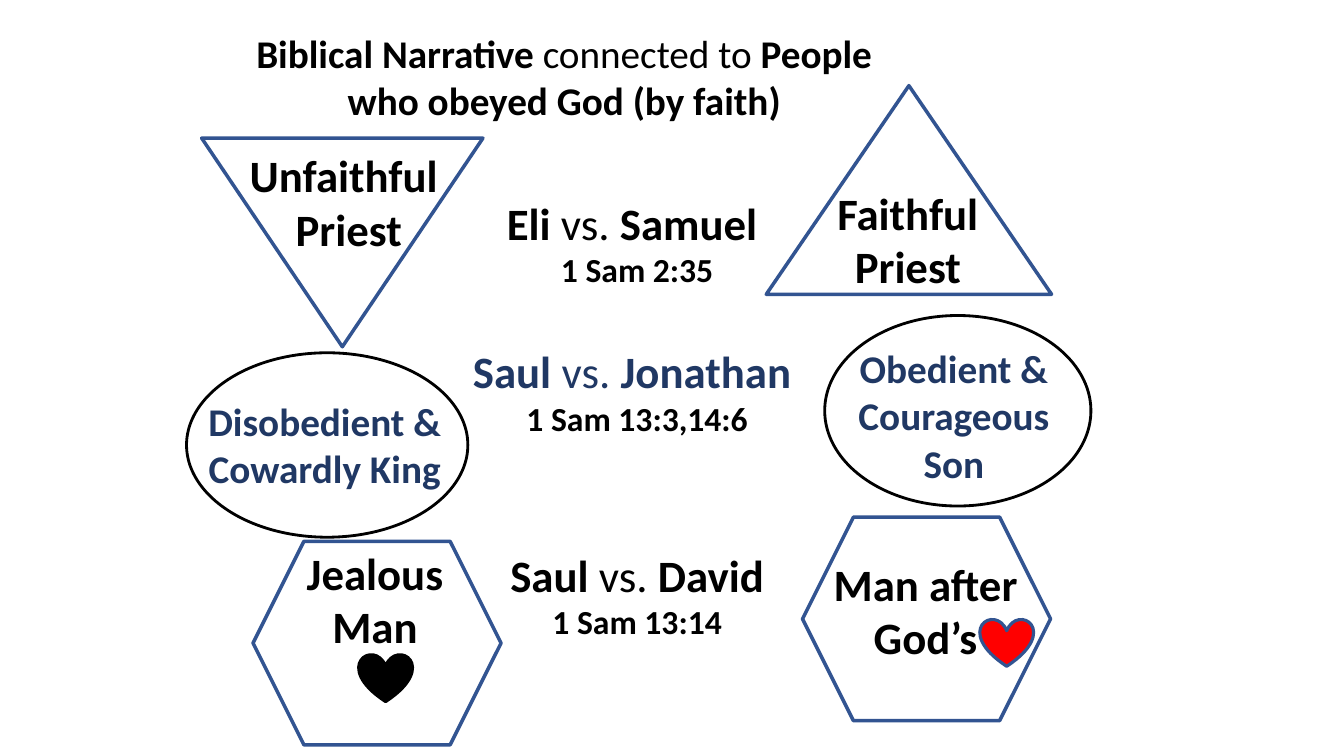
"""Build a slide contrasting biblical people who disobeyed and obeyed God."""
from pptx import Presentation
from pptx.dml.color import RGBColor
from pptx.enum.shapes import MSO_SHAPE as SHAPE
from pptx.enum.text import MSO_ANCHOR, PP_ALIGN
from pptx.util import Inches, Pt

BLACK, NAVY, BLUE, RED = "000000", "203864", "325491", "FF0000"


def color(fmt, value):
    fmt.rgb = RGBColor.from_string(value)


def write(tf, paragraphs):
    tf.word_wrap = True
    tf.vertical_anchor = MSO_ANCHOR.TOP
    for i, (size, ink, before, runs) in enumerate(paragraphs):
        p = tf.paragraphs[0] if i == 0 else tf.add_paragraph()
        p.alignment = PP_ALIGN.CENTER
        p.line_spacing = 1.0
        p.space_before = Pt(before)
        for text, bold in runs:
            r = p.add_run()
            r.text = text
            r.font.name = "Calibri"
            r.font.size = Pt(size)
            r.font.bold = bold
            color(r.font.color, ink)


prs = Presentation()
prs.slide_width, prs.slide_height = Inches(13.33), Inches(7.5)
s = prs.slides.add_slide(prs.slide_layouts[5])

title = s.shapes.title
title.left, title.top = Inches(2.14), Inches(0.24)
title.width, title.height = Inches(6.91), Inches(1.04)
write(title.text_frame, [(28, BLACK, 0, [
    ("Biblical Narrative ", True),
    ("connected to ", False),
    ("People who obeyed God (by faith)", True),
])])

pairs = [
    ("Eli ", "Samuel ", "1 Sam 2:35", BLACK, 0),
    ("Saul ", "Jonathan ", "1 Sam 13:3,14:6", NAVY, 39),
    ("Saul ", "David", "1 Sam 13:14", BLACK, 78),
]
contrasts = []
for first, second, verse, ink, before in pairs:
    contrasts.append((32, ink, before, [(first, True), ("vs. ", False), (second, True)]))
    contrasts.append((24, BLACK, 0, [(verse, True)]))
tb = s.shapes.add_textbox(Inches(4.27), Inches(1.89), Inches(4.1), Inches(5.22))
write(tb.text_frame, contrasts)

outlines = [
    (SHAPE.OVAL, 8.18, 3.13, 2.64, 1.89, 0, None, BLACK, 2),
    (SHAPE.OVAL, 1.85, 3.5, 2.79, 1.83, 0, None, BLACK, 2),
    (SHAPE.ISOSCELES_TRIANGLE, 7.6, 0.85, 2.83, 2.07, 0, None, BLUE, 2.5),
    (SHAPE.ISOSCELES_TRIANGLE, 2, 1.37, 2.79, 2.07, 180, None, BLUE, 2.5),
    (SHAPE.HEXAGON, 7.96, 5.13, 2.46, 2.02, 0, None, BLUE, 2.5),
    (SHAPE.HEXAGON, 2.51, 5.37, 2.46, 2.02, 0, None, BLUE, 2.5),
    (SHAPE.HEART, 9.72, 6.14, 0.53, 0.47, 0, RED, BLUE, 2.25),
    (SHAPE.HEART, 3.56, 6.49, 0.53, 0.47, 0, BLACK, BLACK, 2.25),
]
for kind, x, y, w, h, rotation, fill, line, weight in outlines:
    sp = s.shapes.add_shape(kind, Inches(x), Inches(y), Inches(w), Inches(h))
    sp.shadow.inherit = False
    sp.rotation = rotation
    if fill:
        sp.fill.solid()
        color(sp.fill.fore_color, fill)
    else:
        sp.fill.background()
    color(sp.line.color, line)
    sp.line.width = Pt(weight)

labels = [
    (2.18, 1.42, 2.46, 1.18, 32, BLACK, ["Unfaithful", " Priest"]),
    (8.15, 1.79, 1.71, 1.18, 32, BLACK, ["Faithful Priest"]),
    (1.9, 3.89, 2.64, 1.04, 28, NAVY, ["Disobedient & Cowardly King"]),
    (8.35, 3.37, 2.22, 1.51, 28, NAVY, ["Obedient & Courageous Son"]),
    (2.61, 5.36, 2.32, 1.18, 32, BLACK, ["Jealous ", "Man "]),
    (8.02, 5.47, 2.32, 1.18, 32, BLACK, ["Man after God’s"]),
]
for x, y, w, h, size, ink, lines in labels:
    tb = s.shapes.add_textbox(Inches(x), Inches(y), Inches(w), Inches(h))
    write(tb.text_frame, [(size, ink, 0, [(text, True)]) for text in lines])

prs.save("out.pptx")
